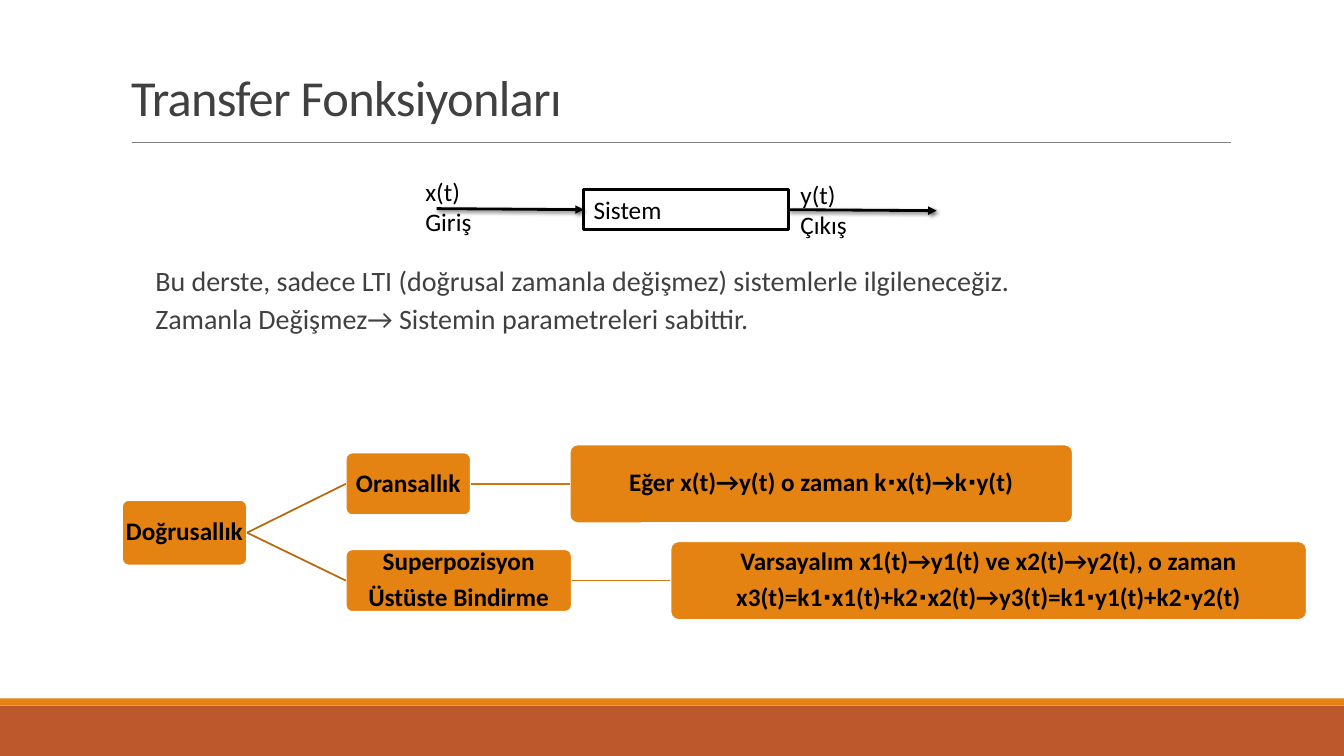
from lxml import etree
from pptx import Presentation
from pptx.dml.color import RGBColor
from pptx.enum import shapes, text
from pptx.oxml import ns, parse_xml
from pptx.util import Inches, Pt

COLORS = {
    "ink": "000000", "text": "404040", "white": "FFFFFF", "rule": "808080",
    "orange": "E48312", "rust": "BD582C", "branch": "B7690E", "link": "CF7710",
}
TOP, LEFT, BOTTOM, RIGHT = range(4)


def color(name):
    return RGBColor.from_string(COLORS[name])


def place(shape, left, top, width, height):
    shape.left, shape.top = Inches(left), Inches(top)
    shape.width, shape.height = Inches(width), Inches(height)


def write(shape, lines, size=18, ink="ink", bold=False, align=text.PP_ALIGN.LEFT,
          anchor=text.MSO_ANCHOR.TOP, insets=(0.1, 0.05), spacing=1.0,
          before=0, after=0, indent=0, tracking=None):
    """Fill a shape with one paragraph per line."""
    frame = shape.text_frame
    frame.word_wrap = True
    frame.auto_size = text.MSO_AUTO_SIZE.NONE
    frame.vertical_anchor = anchor
    frame.margin_left = frame.margin_right = Inches(insets[0])
    frame.margin_top = frame.margin_bottom = Inches(insets[1])
    for index, line in enumerate(lines):
        paragraph = frame.paragraphs[0] if index == 0 else frame.add_paragraph()
        paragraph.alignment = align
        paragraph.line_spacing = spacing
        paragraph.space_before, paragraph.space_after = Pt(before), Pt(after)
        properties = paragraph._p.get_or_add_pPr()
        properties.set("marL", str(Inches(indent)))
        properties.set("indent", "0")
        etree.SubElement(properties, ns.qn("a:buNone"))
        run = paragraph.add_run()
        run.text = line
        run.font.name, run.font.size, run.font.bold = "Calibri", Pt(size), bold
        run.font.color.rgb = color(ink)
        if tracking is not None:
            run._r.get_or_add_rPr().set("spc", str(int(tracking * 100)))


def add_box(slide, box, fill, line=None, width=1.25, kind=shapes.MSO_SHAPE.RECTANGLE):
    shape = slide.shapes.add_shape(kind, *map(Inches, box))
    shape.shadow.inherit = False
    shape.fill.solid()
    shape.fill.fore_color.rgb = color(fill)
    if line:
        shape.line.color.rgb = color(line)
        shape.line.width = Pt(width)
    else:
        shape.line.fill.background()
    return shape


def add_node(slide, box, lines):
    node = add_box(slide, box, "orange", "white", kind=shapes.MSO_SHAPE.ROUNDED_RECTANGLE)
    node.adjustments[0] = 0.1
    write(node, lines, bold=True, align=text.PP_ALIGN.CENTER,
          anchor=text.MSO_ANCHOR.MIDDLE, insets=(0.01, 0.01), spacing=0.9, after=6.3)
    return node


def add_label(slide, box, lines):
    write(slide.shapes.add_textbox(*map(Inches, box)), lines)


def add_line(slide, start, end, ink, width):
    line = slide.shapes.add_connector(
        shapes.MSO_CONNECTOR.STRAIGHT, *map(Inches, (*start, *end)))
    line.line.color.rgb = color(ink)
    line.line.width = Pt(width)
    etree.SubElement(line._element.spPr, ns.qn("a:effectLst"))
    return line


def join(slide, parent, child, ink):
    line = add_line(slide, (0, 0), (1, 1), ink, 1.25)
    line.begin_connect(parent, RIGHT)
    line.end_connect(child, LEFT)


def add_signal(slide, start, end):
    """Arrow with a soft shadow."""
    arrow = add_line(slide, start, end, "ink", 2)
    etree.SubElement(arrow.line._get_or_add_ln(), ns.qn("a:tailEnd"), type="triangle")
    arrow._element.spPr.find(ns.qn("a:effectLst")).append(parse_xml(
        f'<a:outerShdw {ns.nsdecls("a")} blurRad="{Pt(3)}" dist="{Pt(2)}" dir="2700000">'
        f'<a:srgbClr val="{COLORS["ink"]}"><a:alpha val="60000"/></a:srgbClr></a:outerShdw>'))
    return arrow


def add_frame(slide):
    add_box(slide, (0, 7, 13.33, 0.5), "rust")
    add_box(slide, (0, 6.93, 13.33, 0.07), "orange")
    add_line(slide, (1.31, 1.41), (12.21, 1.41), "rule", 0.5)


def add_system_diagram(slide):
    system = add_box(slide, (5.79, 1.88, 2.03, 0.4), "white", "ink", 2.25)
    write(system, ["Sistem"])
    add_signal(slide, (7.82, 2.08), (9.29, 2.09)).begin_connect(system, RIGHT)
    add_signal(slide, (4.33, 2.07), (5.79, 2.08)).end_connect(system, LEFT)
    add_label(slide, (4.12, 1.7, 1.79, 0.71), ["x(t)", "Giriş"])
    add_label(slide, (7.84, 1.73, 1.79, 0.71), ["y(t)", "Çıkış"])


def add_linearity_tree(slide):
    root = add_node(slide, (1.21, 4.96, 1.24, 0.65), ["Doğrusallık"])
    branches = [
        (4.8, 1.24, ["Oransallık"], 4.99, ["Eğer x(t)→y(t) o zaman k∙x(t)→k∙y(t)"]),
        (5.76, 2.24, ["Superpozisyon", "Üstüste Bindirme"], 6.31,
         ["Varsayalım x1(t)→y1(t) ve x2(t)→y2(t), o zaman",
          "x3(t)=k1∙x1(t)+k2∙x2(t)→y3(t)=k1∙y1(t)+k2∙y2(t)"]),
    ]
    left, gap, height, rule_height = 3.43, 0.98, 0.62, 0.78
    for middle, width, name, rule_width, rule in branches:
        branch = add_node(slide, (left, middle - height / 2, width, height), name)
        definition = add_node(slide, (left + width + gap, middle - rule_height / 2,
                                      rule_width, rule_height), rule)
        join(slide, root, branch, "branch")
        join(slide, branch, definition, "link")


def main():
    presentation = Presentation()
    presentation.slide_width, presentation.slide_height = Inches(13.33), Inches(7.5)
    slide = presentation.slides.add_slide(presentation.slide_layouts[1])

    # Band and rule
    add_frame(slide)

    # Title and body
    title, body = slide.placeholders
    place(title, 1.2, 0.31, 11, 1)
    write(title, ["Transfer Fonksiyonları"], size=36, ink="text",
          anchor=text.MSO_ANCHOR.BOTTOM, spacing=0.85, tracking=-0.5)
    place(body, 1.34, 2.6, 11, 1.2)
    write(body, ["Bu derste, sadece LTI (doğrusal zamanla değişmez) sistemlerle ilgileneceğiz.",
                 "Zamanla Değişmez→ Sistemin parametreleri sabittir."],
          size=20, ink="text", insets=(0, 0.05), spacing=0.9, before=4, after=2, indent=0.2)

    # Diagrams
    add_system_diagram(slide)
    add_linearity_tree(slide)
    presentation.save("out.pptx")


if __name__ == "__main__":
    main()
